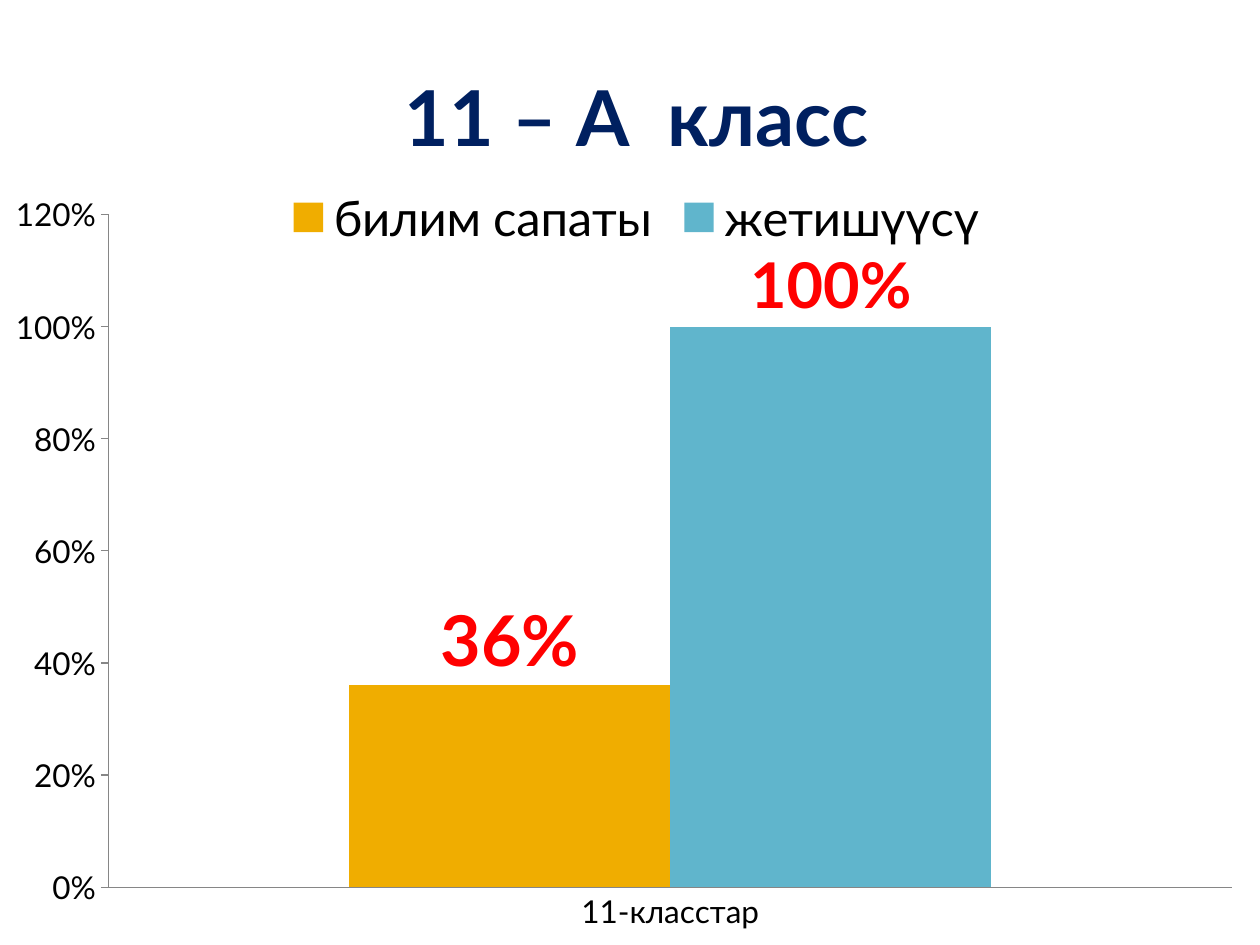
from pptx import Presentation
from pptx.chart.data import CategoryChartData
from pptx.dml.color import RGBColor
from pptx.enum.chart import XL_CHART_TYPE as ChartType
from pptx.enum.chart import XL_LABEL_POSITION as LabelPosition
from pptx.enum.chart import XL_LEGEND_POSITION as LegendPosition
from pptx.enum.chart import XL_TICK_MARK as TickMark
from pptx.oxml import parse_xml
from pptx.oxml.ns import nsdecls, qn
from pptx.util import Inches, Pt

COLORS = {
    "title": "002060",
    "text": "000000",
    "axis": "868686",
    "quality": "F0AD00",
    "progress": "60B5CC",
    "label": "FF0000",
}
SERIES = [
    ("билим сапаты", 0.36, "quality", 40),
    ("жетишүүсү", 1, "progress", 36),
]


def color(name):
    return RGBColor.from_string(COLORS[name])


def format_font(font, color_name, **values):
    for name, value in {"name": "Lato", **values}.items():
        setattr(font, name, value)
    font.color.rgb = color(color_name)


def layout_xml(target="", **values):
    target_xml = f'<c:layoutTarget val="{target}"/>' if target else ""
    modes = "".join(f'<c:{key}Mode val="edge"/>' for key in ("x", "y"))
    numbers = "".join(f'<c:{key} val="{value}"/>' for key, value in values.items())
    return parse_xml(
        f"<c:layout {nsdecls('c')}><c:manualLayout>"
        f"{target_xml}{modes}{numbers}</c:manualLayout></c:layout>"
    )


def place(element, before, layout):
    for old_layout in element.findall(qn("c:layout")):
        element.remove(old_layout)
    element.find(qn(before)).addprevious(layout)


def add_column_chart(slide, width, height):
    data = CategoryChartData(number_format="0%")
    data.categories = ["11-класстар"]
    for name, value, *_ in SERIES:
        data.add_series(name, [value])
    frame = slide.shapes.add_chart(
        ChartType.COLUMN_CLUSTERED, Inches(0), Inches(0), width, height, data
    )
    chart = frame.chart
    format_font(chart.font, "text", size=Pt(18))
    return chart


def format_title(chart):
    chart.has_title = True
    title = chart.chart_title
    run = title.text_frame.paragraphs[0].add_run()
    run.text = "11 – А  класс"
    format_font(run.font, "title", size=Pt(44), bold=True)
    place(title._element, "c:overlay", layout_xml(x=0.31, y=0.05))


def format_legend(chart):
    chart.has_legend = True
    legend = chart.legend
    legend.position = LegendPosition.TOP
    legend.include_in_layout = False
    format_font(legend.font, "text", size=Pt(28))
    place(legend._element, "c:overlay", layout_xml(x=0.22, y=0.19, w=0.57, h=0.08))


def format_axes(chart):
    value_axis, category_axis = chart.value_axis, chart.category_axis
    for axis, tick in ((value_axis, TickMark.OUTSIDE), (category_axis, TickMark.NONE)):
        axis.has_major_gridlines = False
        axis.major_tick_mark = tick
        axis.minor_tick_mark = TickMark.NONE
        axis.format.line.color.rgb = color("axis")
        axis.format.line.width = Pt(0.75)
    for name, value in {
        "minimum_scale": 0, "maximum_scale": 1.2, "major_unit": 0.2
    }.items():
        setattr(value_axis, name, value)
    value_axis.tick_labels.number_format = "0%"
    value_axis.tick_labels.number_format_is_linked = False


def format_columns(chart):
    plot = chart.plots[0]
    for name, value in {
        "gap_width": 150, "overlap": 0, "vary_by_categories": False
    }.items():
        setattr(plot, name, value)
    for series, (_, _, fill, size) in zip(plot.series, SERIES):
        series.format.fill.solid()
        series.format.fill.fore_color.rgb = color(fill)
        labels = series.data_labels
        for name, value in {
            "show_value": True,
            "number_format": "0%",
            "number_format_is_linked": False,
            "position": LabelPosition.OUTSIDE_END,
        }.items():
            setattr(labels, name, value)
        format_font(labels.font, "label", size=Pt(size), bold=True)
    plot_area = plot._element.getparent()
    place(
        plot_area,
        "c:barChart",
        layout_xml("inner", x=0.086, y=0.227, w=0.892, h=0.712),
    )


def main():
    presentation = Presentation()
    presentation.slide_width = Inches(10)
    presentation.slide_height = Inches(7.5)
    slide = presentation.slides.add_slide(presentation.slide_layouts[6])
    chart = add_column_chart(
        slide, presentation.slide_width, presentation.slide_height
    )
    format_title(chart)
    format_legend(chart)
    format_axes(chart)
    format_columns(chart)
    presentation.save("out.pptx")


if __name__ == "__main__":
    main()
